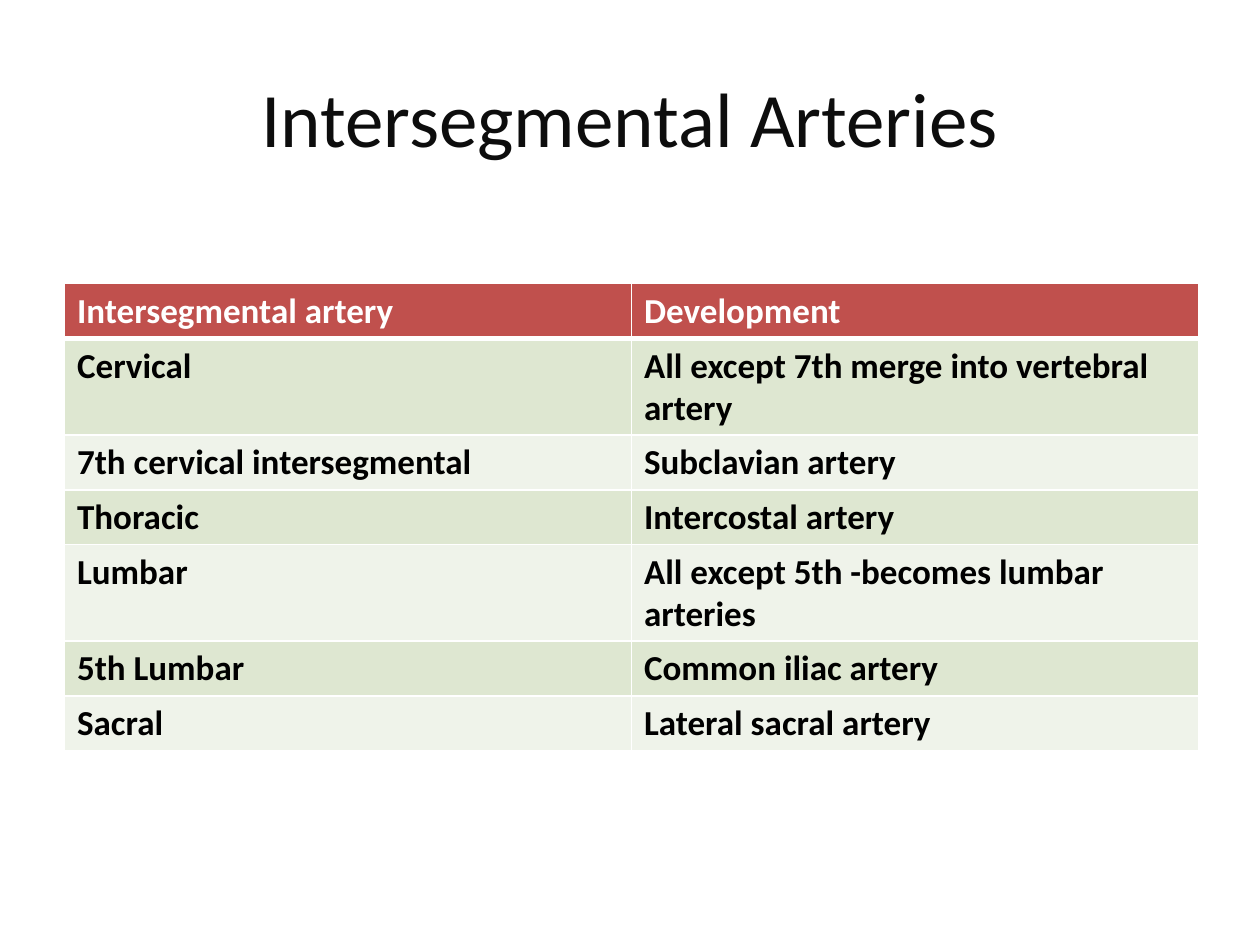
from lxml import etree
from pptx import Presentation
from pptx.dml.color import RGBColor
from pptx.enum.text import MSO_ANCHOR, PP_ALIGN
from pptx.oxml import parse_xml
from pptx.oxml.ns import qn
from pptx.util import Cm, Pt

MIDDLE = MSO_ANCHOR.MIDDLE
LEFT, CENTER = PP_ALIGN.LEFT, PP_ALIGN.CENTER
NS = "http://schemas.openxmlformats.org/drawingml/2006/main"
HEX = {"title": "0D0D0D", "head": "C0504D", "odd": "DEE7D1", "even": "EFF3EA",
       "white": "FFFFFF", "black": "000000"}
ROWS = [
    ("Intersegmental artery", "Development"),
    ("Cervical", "All except 7th merge into vertebral artery"),
    ("7th cervical intersegmental", "Subclavian artery"),
    ("Thoracic", "Intercostal artery"),
    ("Lumbar", "All except 5th -becomes lumbar arteries"),
    ("5th Lumbar", "Common iliac artery"),
    ("Sacral", "Lateral sacral artery"),
]


def write(frame, text, size=20, color="black", bold=False, align=LEFT):
    """Put formatted text in a frame and return its run."""
    para = frame.paragraphs[0]
    para.alignment = align
    run = para.add_run()
    run.text = text
    font = run.font
    font.name, font.size, font.bold = "Calibri", Pt(size), bold
    font.color.rgb = RGBColor.from_string(HEX[color])
    return run


def shade(run):
    """Give the letters of a run a soft shadow."""
    effect = parse_xml(
        f'<a:effectLst xmlns:a="{NS}"><a:outerShdw blurRad="38100" dist="38100" '
        'dir="2700000" algn="tl"><a:srgbClr val="000000"><a:alpha val="43000"/>'
        '</a:srgbClr></a:outerShdw></a:effectLst>')
    run.font.fill
    run.font._element.find(qn("a:solidFill")).addnext(effect)


def add_title(slide, text):
    """Add the centred slide title."""
    box = slide.shapes.add_textbox(Cm(1.27), Cm(0.76), Cm(22.86), Cm(3.18))
    frame = box.text_frame
    frame.word_wrap = True
    frame.vertical_anchor = MIDDLE
    shade(write(frame, text, size=44, color="title", align=CENTER))


def edge(cell, side, width):
    """Draw one white border of a cell."""
    line = etree.SubElement(cell._tc.get_or_add_tcPr(), qn(f"a:ln{side}"),
                            w=str(Pt(width)))
    fill = etree.SubElement(line, qn("a:solidFill"))
    etree.SubElement(fill, qn("a:srgbClr"), val=HEX["white"])


def add_grid(slide, rows):
    """Add the table with a header and banded rows."""
    shape = slide.shapes.add_table(len(rows), 2, Cm(1.3), Cm(5.72),
                                   Cm(22.86), Cm(1.03 * len(rows)))
    grid = shape.table
    for i, row in enumerate(rows):
        band = "head" if i == 0 else "odd" if i % 2 else "even"
        for j, text in enumerate(row):
            cell = grid.cell(i, j)
            for side in "LRTB":
                edge(cell, side, 3 if i == 0 and side == "B" else 1)
            cell.fill.solid()
            cell.fill.fore_color.rgb = RGBColor.from_string(HEX[band])
            write(cell.text_frame, text, bold=True,
                  color="black" if i else "white")


def main():
    """Build and save the slide."""
    deck = Presentation()
    deck.slide_width, deck.slide_height = Cm(25.4), Cm(19.05)
    slide = deck.slides.add_slide(deck.slide_layouts[6])
    add_title(slide, "Intersegmental Arteries")
    add_grid(slide, ROWS)
    deck.save("out.pptx")


if __name__ == "__main__":
    main()
